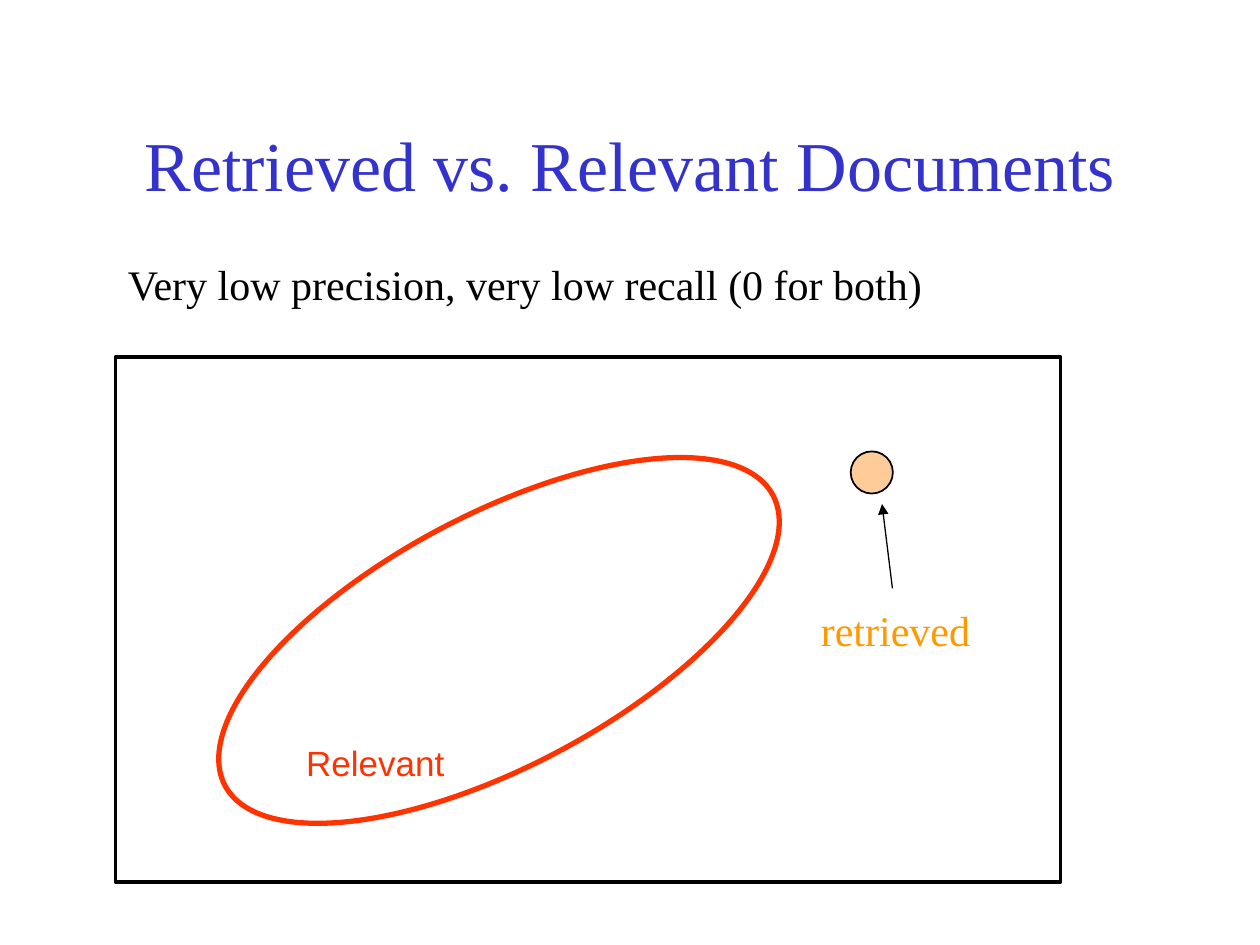
from lxml import etree
from pptx import Presentation
from pptx import util as u
from pptx.dml.color import RGBColor
from pptx.enum import shapes, text
from pptx.oxml.ns import qn

SERIF, SANS = "Times New Roman", "Arial"
BLACK, BLUE, RED, ORANGE, PEACH = "000000", "3333CC", "FF3300", "FF9900", "FFCC99"


def color(hex_string):
    """Turn a hex string into a colour."""
    return RGBColor.from_string(hex_string)


def add_text(slide, words, left, top, width, height, size=24, font=SERIF, fill=BLACK,
             align=text.PP_ALIGN.LEFT, anchor=text.MSO_ANCHOR.TOP, wrap=False):
    """Place one line of text in a box given in centimetres."""
    box = slide.shapes.add_textbox(u.Cm(left), u.Cm(top), u.Cm(width), u.Cm(height))
    frame = box.text_frame
    frame.word_wrap = wrap
    frame.vertical_anchor = anchor
    paragraph = frame.paragraphs[0]
    paragraph.alignment = align
    run = paragraph.add_run()
    run.text = words
    run.font.size = u.Pt(size)
    run.font.name = font
    run.font.color.rgb = color(fill)
    return box


def add_outline(slide, kind, left, top, width, height, line, weight, fill=None, rotation=0):
    """Place a preset shape with an outline and an optional fill."""
    shape = slide.shapes.add_shape(kind, u.Cm(left), u.Cm(top), u.Cm(width), u.Cm(height))
    shape.shadow.inherit = False
    shape.rotation = rotation
    shape.line.color.rgb = color(line)
    shape.line.width = u.Pt(weight)
    if fill:
        shape.fill.solid()
        shape.fill.fore_color.rgb = color(fill)
    else:
        shape.fill.background()
    return shape


def add_arrow(slide, start_x, start_y, end_x, end_y):
    """Draw a thin black arrow that points at its end."""
    arrow = slide.shapes.add_connector(
        shapes.MSO_CONNECTOR.STRAIGHT, u.Cm(start_x), u.Cm(start_y), u.Cm(end_x), u.Cm(end_y))
    arrow.line.color.rgb = color(BLACK)
    arrow.line.width = u.Pt(0.75)
    etree.SubElement(arrow.line._get_or_add_ln(), qn("a:tailEnd"), type="triangle")
    etree.SubElement(arrow._element.spPr, qn("a:effectLst"))
    return arrow


def add_heading(slide, left, top, width):
    """Place the title and the statement below it."""
    add_text(slide, "Retrieved vs. Relevant Documents", left, top, width, 3.18, size=40,
             fill=BLUE, align=text.PP_ALIGN.CENTER, anchor=text.MSO_ANCHOR.MIDDLE, wrap=True)
    add_text(slide, "Very low precision, very low recall (0 for both)",
             left + 0.43, top + 3.38, 16.61, 1.27)


def add_document_space(slide, left, top, width, height):
    """Draw all documents as a frame holding the relevant and retrieved sets."""
    oval = shapes.MSO_SHAPE.OVAL
    add_outline(slide, shapes.MSO_SHAPE.RECTANGLE, left, top, width, height, BLACK, 2.25)
    add_outline(slide, oval, left + 1.48, top + 3.17, 12.5, 5.08, RED, 3, rotation=332.1)
    add_text(slide, "Relevant", left + 3.59, top + 7.62, 3.3, 1.1,
             size=20, font=SANS, fill=RED)
    add_outline(slide, oval, left + 14.82, top + 1.9, 0.85, 0.85, BLACK, 1, fill=PEACH)
    add_text(slide, "retrieved", left + 13.97, top + 4.87, 3.53, 1.27, fill=ORANGE)
    add_arrow(slide, left + 15.66, top + 4.66, left + 15.45, top + 2.96)


def main():
    """Build the slide and save it."""
    presentation = Presentation()
    presentation.slide_width = u.Cm(25.4)
    presentation.slide_height = u.Cm(19.05)
    slide = presentation.slides.add_slide(presentation.slide_layouts[6])
    add_heading(slide, 1.9, 1.7, 21.6)
    add_document_space(slide, 2.33, 7.2, 19.05, 10.58)
    presentation.save("out.pptx")


if __name__ == "__main__":
    main()
